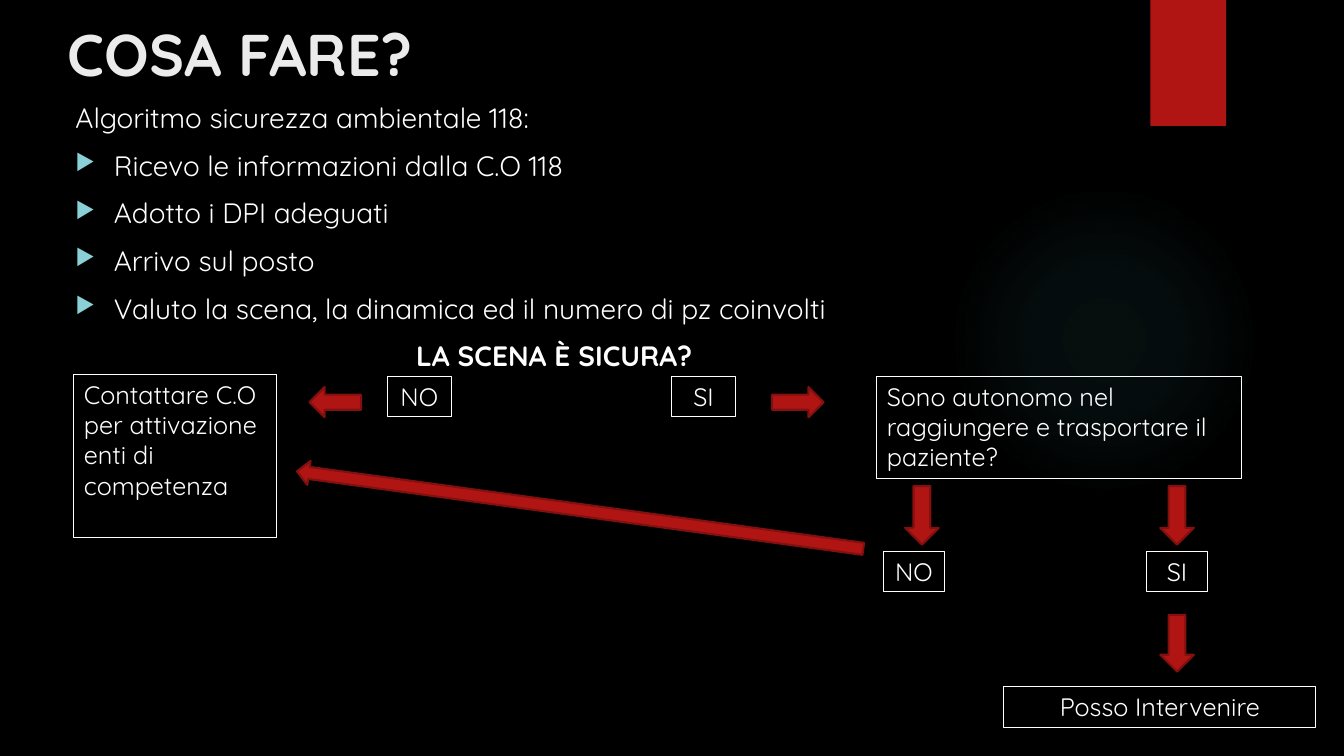
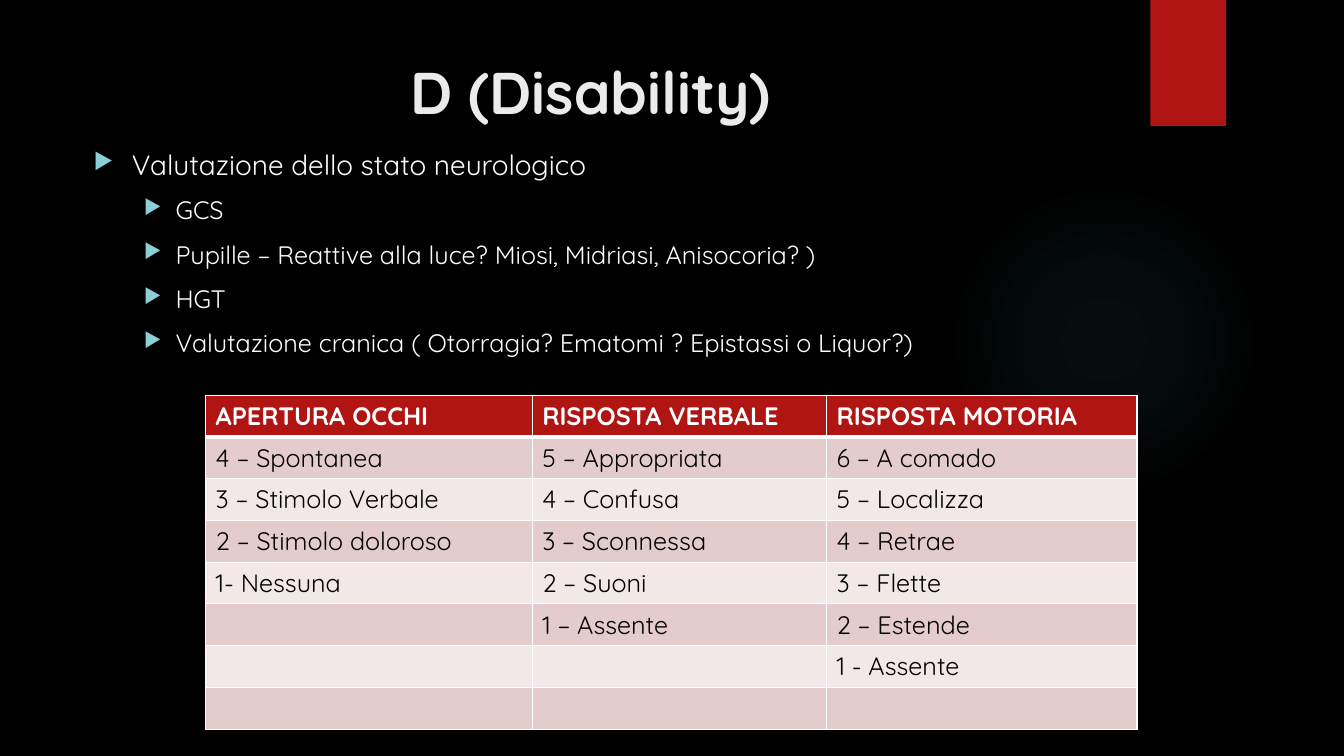
from dataclasses import dataclass

from lxml import etree
from pptx import Presentation
from pptx.dml.color import RGBColor
from pptx.enum.shapes import MSO_SHAPE as Shape
from pptx.enum.text import MSO_ANCHOR as Anchor, PP_ALIGN as Align
from pptx.oxml import parse_xml
from pptx.oxml.ns import nsdecls, qn
from pptx.util import Inches, Pt

FONT = "Quicksand"
BLACK, WHITE, TITLE = "000000", "FFFFFF", "EBEBEB"
RED, DARK_RED = "B01513", "82100E"
TEAL, BULLET = "50B9C1", "8AD0D6"
STRIPES = ("E4CCCC", "F2E8E7")

# The grid divides the slide into 100 columns and 100 rows
WIDTH, HEIGHT = Inches(13.33), Inches(7.5)
COL, ROW = WIDTH / 100, HEIGHT / 100
LINE_ROWS = 5.4  # a box holding one line of text


@dataclass
class Box:
    """An area of the slide, in columns and rows."""
    col: float
    row: float
    cols: float
    rows: float

    def inner(self, col, row, cols, rows):
        return Box(self.col + col, self.row + row, cols, rows)

    @property
    def place(self):
        return (round(self.col * COL), round(self.row * ROW),
                round(self.cols * COL), round(self.rows * ROW))


def color(value):
    return RGBColor.from_string(value)


def paint(fill, value):
    fill.solid()
    fill.fore_color.rgb = color(value)


def add_run(paragraph, text, size=18, ink=WHITE, bold=False):
    run = paragraph.add_run()
    run.text = text
    font = run.font
    font.name, font.size, font.bold = FONT, Pt(size), bold
    font.color.rgb = color(ink)


def set_indent(paragraph, left, hanging=0):
    props = paragraph._p.get_or_add_pPr()
    props.set("marL", str(round(left * COL)))
    props.set("indent", str(-round(hanging * COL)))
    return props


def add_bullet(paragraph, level):
    left, hanging = ((2.85, 2.85), (6.1, 2.35))[level]
    props = set_indent(paragraph, left, hanging)
    bullet_color = etree.SubElement(props, qn("a:buClr"))
    etree.SubElement(bullet_color, qn("a:srgbClr"), val=BULLET)
    etree.SubElement(props, qn("a:buSzPct"), val="80000")
    etree.SubElement(props, qn("a:buChar"), char="▶")
    paragraph.level = level


def add_plain_shape(slide, kind, box):
    shape = slide.shapes.add_shape(kind, *box.place)
    shape.shadow.inherit = False
    shape.line.fill.background()
    return shape


def add_backdrop(slide):
    # Faint round glow
    glow = add_plain_shape(slide, Shape.OVAL, Box(70.6, 24.4, 23.1, 41.07))
    stops = "".join(
        f'<a:gs pos="{at}000"><a:srgbClr val="{TEAL}">'
        f'<a:alpha val="{alpha}000"/></a:srgbClr></a:gs>'
        for at, alpha in ((0, 7), (36, 6), (69, 0), (100, 0)))
    gradient = parse_xml(
        f'<a:gradFill {nsdecls("a")}><a:gsLst>{stops}</a:gsLst>'
        '<a:path path="circle"><a:fillToRect l="50000" t="50000" '
        'r="50000" b="50000"/></a:path></a:gradFill>')
    glow._element.spPr.find(qn("a:prstGeom")).addnext(gradient)
    # Red ribbon
    ribbon = add_plain_shape(slide, Shape.RECTANGLE, Box(85.6, 0, 5.63, 16.67))
    paint(ribbon.fill, RED)


def start_slide(deck, title, col, row, align=Align.LEFT):
    slide = deck.slides.add_slide(deck.slide_layouts[5])
    add_backdrop(slide)
    heading = slide.shapes.title
    heading.left, heading.top, heading.width, heading.height = Box(
        col, row, 77.2, 20.4).place
    frame = heading.text_frame
    frame.vertical_anchor = Anchor.TOP
    frame.paragraphs[0].alignment = align
    add_run(frame.paragraphs[0], title, 42, TITLE, bold=True)
    return slide


def add_points(slide, box, points):
    """Each point is (text, level); level None has no bullet."""
    frame = slide.shapes.add_textbox(*box.place).text_frame
    frame.word_wrap = True
    for index, (text, level) in enumerate(points):
        paragraph = frame.add_paragraph() if index else frame.paragraphs[0]
        if level is not None:
            add_bullet(paragraph, level)
        if index:
            paragraph.space_before = Pt(10)
        add_run(paragraph, text, 18 if level == 1 else 20)
    return frame


def add_step(slide, box, *lines, align=Align.CENTER):
    step = add_plain_shape(slide, Shape.RECTANGLE, box)
    step.fill.background()
    step.line.color.rgb = color(WHITE)
    step.line.width = Pt(0.75)
    frame = step.text_frame
    frame.word_wrap = True
    frame.vertical_anchor = Anchor.TOP
    for index, text in enumerate(lines):
        paragraph = frame.add_paragraph() if index else frame.paragraphs[0]
        paragraph.alignment = align
        add_run(paragraph, text)


def add_arrow(slide, kind, box, turn=0):
    arrow = add_plain_shape(slide, kind, box)
    paint(arrow.fill, RED)
    arrow.line.color.rgb = color(DARK_RED)
    arrow.line.width = Pt(1.5)
    arrow.rotation = turn


def add_decision_flow(slide, box):
    # Is the scene safe?
    add_step(slide, box.inner(0, 0, 15.1, 21.6),
             "Contattare C.O per attivazione enti di competenza",
             align=Align.LEFT)
    for answer, col in (("NO", 23.3), ("SI", 44.45)):
        add_step(slide, box.inner(col, 0.25, 4.8, LINE_ROWS), answer)
    for kind, col in ((Shape.LEFT_ARROW, 17.53), (Shape.RIGHT_ARROW, 51.95)):
        add_arrow(slide, kind, box.inner(col, 1.7, 3.83, 4))

    # Can I manage alone?
    add_step(slide, box.inner(59.75, 0.25, 27.1, 13.5), "Sono autonomo nel",
             "raggiungere e trasportare il", "paziente?", align=Align.LEFT)
    for answer, col, arrow_col in (("NO", 60.2, 61.85), ("SI", 79.78, 80.83)):
        add_arrow(slide, Shape.DOWN_ARROW,
                  box.inner(arrow_col, 14.8, 2.5, 7.75))
        add_step(slide, box.inner(col, 23.4, 4.6, LINE_ROWS), answer)

    # Outcomes: call for help, or step in
    add_arrow(slide, Shape.LEFT_ARROW, box.inner(16.4, 16.37, 42.53, 3.2), 7.8)
    add_arrow(slide, Shape.DOWN_ARROW, box.inner(80.83, 31.83, 2.5, 7.5))
    add_step(slide, box.inner(69.2, 41.3, 23.2, LINE_ROWS), "Posso Intervenire")


def add_border(cell, side, width):
    line = etree.SubElement(cell._tc.get_or_add_tcPr(), qn(f"a:ln{side}"),
                            w=str(Pt(width)))
    fill = etree.SubElement(line, qn("a:solidFill"))
    etree.SubElement(fill, qn("a:srgbClr"), val=WHITE)


def add_score_table(slide, box, col_widths, columns):
    """Each column is its heading followed by its scores."""
    row_count = 8
    table = slide.shapes.add_table(row_count, len(columns), *box.place).table
    for row in table.rows:
        row.height = round(box.rows * ROW / row_count)
    for c, (width, texts) in enumerate(zip(col_widths, columns)):
        table.columns[c].width = round(width * COL)
        for r in range(row_count):
            cell = table.cell(r, c)
            for side in "LRTB":
                under_header = (r, side) in ((0, "B"), (1, "T"))
                add_border(cell, side, 3 if under_header else 1)
            paint(cell.fill, STRIPES[(r - 1) % 2] if r else RED)
            if r < len(texts):
                add_run(cell.text_frame.paragraphs[0], texts[r],
                        ink=BLACK if r else WHITE, bold=r == 0)


def build_safety_slide(deck):
    slide = start_slide(deck, "COSA FARE?", 4.28, 1.73)
    frame = add_points(slide, Box(4.88, 12.67, 66.75, 37.07), [
        ("Algoritmo sicurezza ambientale 118:", None),
        ("Ricevo le informazioni dalla C.O 118", 0),
        ("Adotto i DPI adeguati", 0),
        ("Arrivo sul posto", 0),
        ("Valuto la scena, la dinamica ed il numero di pz coinvolti", 0)])
    # Question that opens the flow
    question = frame.add_paragraph()
    set_indent(question, 25.35)
    question.space_before = Pt(10)
    add_run(question, "LA SCENA È SICURA?", 20, bold=True)
    add_decision_flow(slide, Box(5.5, 49.5, 92.4, 46.7))


def build_disability_slide(deck):
    slide = start_slide(deck, "D (Disability)", 5.33, 6.67, Align.CENTER)
    add_points(slide, Box(6.23, 18.8, 76.2, 32), [
        ("Valutazione dello stato neurologico", 0),
        ("GCS", 1),
        ("Pupille – Reattive alla luce? Miosi, Midriasi, Anisocoria? )", 1),
        ("HGT", 1),
        ("Valutazione cranica ( Otorragia? Ematomi ? Epistassi o Liquor?)", 1)])
    add_score_table(slide, Box(15.3, 52.27, 69.3, 44.2), (24.3, 21.9, 23.1), [
        ("APERTURA OCCHI", "4 – Spontanea", "3 – Stimolo Verbale",
         "2 – Stimolo doloroso", "1- Nessuna"),
        ("RISPOSTA VERBALE", "5 – Appropriata", "4 – Confusa",
         "3 – Sconnessa", "2 – Suoni", "1 – Assente"),
        ("RISPOSTA MOTORIA", "6 – A comado", "5 – Localizza", "4 – Retrae",
         "3 – Flette", "2 – Estende", "1 - Assente")])


def main():
    deck = Presentation()
    deck.slide_width, deck.slide_height = WIDTH, HEIGHT
    paint(deck.slide_master.background.fill, BLACK)
    build_safety_slide(deck)
    build_disability_slide(deck)
    deck.save("out.pptx")


if __name__ == "__main__":
    main()
